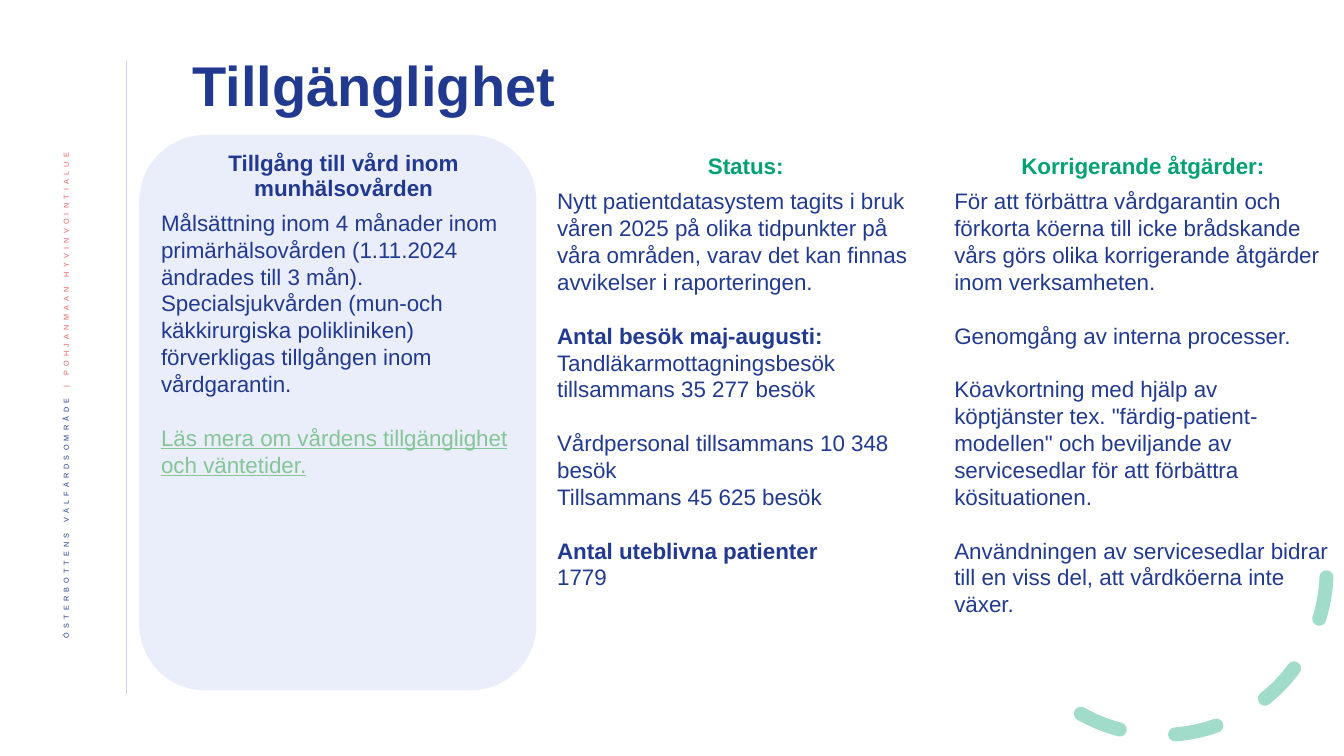
from lxml.etree import SubElement
from pptx import Presentation
from pptx.dml.color import RGBColor
from pptx.enum.dml import MSO_LINE
from pptx.enum.shapes import MSO_CONNECTOR, MSO_SHAPE
from pptx.enum.text import MSO_ANCHOR, MSO_AUTO_SIZE, PP_ALIGN
from pptx.oxml.ns import qn
from pptx.util import Cm, Pt

NAVY, GREEN, LINK, CORAL, LAVENDER = "213A8F", "00A174", "85C598", "EB5C5F", "C9D2F2"
LINE_PITCH = 19.2

# Each paragraph: style ("text", "bold" or "link"), starts a new group, wording
TARGET = [
    ("text", False, "Målsättning inom 4 månader inom primärhälsovården (1.11.2024 ändrades till 3 mån)."),
    ("text", False, "Specialsjukvården (mun-och käkkirurgiska polikliniken) förverkligas "
                    "tillgången inom vårdgarantin."),
    ("link", True, "Läs mera om vårdens tillgänglighet och väntetider."),
]
STATUS = [
    ("text", False, "Nytt patientdatasystem tagits i bruk våren 2025 på olika tidpunkter på våra "
                    "områden, varav det kan finnas avvikelser i raporteringen."),
    ("bold", True, "Antal besök maj-augusti:"),
    ("text", False, "Tandläkarmottagningsbesök tillsammans 35 277 besök"),
    ("text", True, "Vårdpersonal tillsammans 10 348 besök"),
    ("text", False, "Tillsammans 45 625 besök"),
    ("bold", True, "Antal uteblivna patienter"),
    ("text", False, "1779"),
]
ACTIONS = [
    ("text", False, "För att förbättra vårdgarantin och förkorta köerna till icke brådskande vårs "
                    "görs olika korrigerande åtgärder inom verksamheten."),
    ("text", True, "Genomgång av interna processer."),
    ("text", True, "Köavkortning med hjälp av köptjänster tex. \"färdig-patient-modellen\" och "
                   "beviljande av servicesedlar för att förbättra kösituationen."),
    ("text", True, "Användningen av servicesedlar bidrar till en viss del, att vårdköerna inte växer."),
]


def paint(format_, color, opacity=None):
    """Give a fill a solid colour, with opacity in percent."""
    format_.solid()
    format_.fore_color.rgb = RGBColor.from_string(color)
    if opacity is not None:
        srgb = format_._xPr.find(".//" + qn("a:srgbClr"))
        SubElement(srgb, qn("a:alpha")).set("val", str(opacity * 1000))


def set_font(font, size, color, bold=False):
    font.name = "Arial"
    font.size = Pt(size)
    font.bold = bold
    font.color.rgb = RGBColor.from_string(color)


def add_text_box(page, left, top, width, height):
    box = page.shapes.add_textbox(Cm(left), Cm(top), Cm(width), Cm(height))
    box.text_frame.word_wrap = True
    return box.text_frame


def add_title(page, left, top, width, height, text):
    title = page.shapes.title
    title.left, title.top, title.width, title.height = Cm(left), Cm(top), Cm(width), Cm(height)
    frame = title.text_frame
    frame.auto_size = MSO_AUTO_SIZE.NONE
    frame.vertical_anchor = MSO_ANCHOR.MIDDLE
    frame.text = text
    para = frame.paragraphs[0]
    para.alignment = PP_ALIGN.LEFT
    para.line_spacing = 0.9
    set_font(para.font, 40, NAVY, True)


def add_side_band(page, left, top, width, height):
    """Vertical organisation name with the thin rule to its right."""
    rule = page.shapes.add_connector(MSO_CONNECTOR.STRAIGHT, Cm(left + 2.11), Cm(top - 2.06),
                                     Cm(left + 2.11), Cm(top + 13.87))
    paint(rule.line.fill, LAVENDER)
    rule.line.width = Pt(0.5)
    SubElement(rule._element.spPr, qn("a:effectLst"))

    frame = add_text_box(page, left, top, width, height)
    frame.vertical_anchor = MSO_ANCHOR.MIDDLE
    frame._txBody.bodyPr.set("vert", "vert270")
    para = frame.paragraphs[0]
    para.alignment = PP_ALIGN.RIGHT
    para.line_spacing = 0.9
    for text, color in (("ÖSTERBOTTENS VÄLFÄRDSOMRÅDE ", NAVY),
                        ("| POHJANMAAN HYVINVOINTIALUE", CORAL)):
        span = para.add_run()
        span.text = text
        set_font(span.font, 9, color)
        properties = span._r.get_or_add_rPr()
        properties.set("baseline", "30000")
        properties.set("spc", "300")


def add_dashed_arc(page, left, top, size):
    arc = page.shapes.add_shape(MSO_SHAPE.ARC, Cm(left), Cm(top), Cm(size), Cm(size))
    arc.shadow.inherit = False
    arc.rotation = 98.9
    arc.adjustments[0], arc.adjustments[1] = 158.17, 17.81
    arc.fill.background()
    paint(arc.line.fill, GREEN, 36)
    arc.line.width = Pt(10)
    arc.line.dash_style = MSO_LINE.DASH
    arc.line._ln.set("cap", "rnd")


def add_card(page, left, top, width, height):
    card = page.shapes.add_shape(MSO_SHAPE.ROUNDED_RECTANGLE, Cm(left), Cm(top),
                                 Cm(width), Cm(height))
    card.shadow.inherit = False
    paint(card.fill, LAVENDER, 38)
    card.line.fill.background()


def add_column(page, left, top, width, height, heading, color, content, heading_spacing=1):
    frame = add_text_box(page, left, top, width, height)
    para = frame.paragraphs[0]
    para.text = heading
    para.alignment = PP_ALIGN.CENTER
    para.line_spacing = Pt(LINE_PITCH * heading_spacing)
    para.space_after = Pt(6)
    set_font(para.font, 16, color, True)
    for style, new_group, text in content:
        para = frame.add_paragraph()
        para.text = text
        para.line_spacing = Pt(LINE_PITCH)
        if new_group:
            para.space_before = Pt(LINE_PITCH)
        set_font(para.font, 16, LINK if style == "link" else NAVY, style == "bold")
        if style == "link":
            para.font.underline = True


def main():
    deck = Presentation()
    deck.slide_width, deck.slide_height = Cm(33.87), Cm(19.05)
    page = deck.slides.add_slide(deck.slide_layouts[5])
    add_side_band(page, 1.07, 3.61, 1.32, 14.55)
    add_dashed_arc(page, 25.12, 10.21, 8.31)
    add_title(page, 4.6, 1.14, 25.9, 2.16, "Tillgänglighet")
    add_card(page, 3.51, 3.4, 10.01, 14)
    add_column(page, 3.81, 3.71, 9.7, 8.53, "Tillgång till vård inom munhälsovården",
               NAVY, TARGET, 0.9)
    add_column(page, 13.79, 3.71, 10.01, 12.78, "Status:", GREEN, STATUS)
    add_column(page, 23.8, 3.71, 10.01, 12.09, "Korrigerande åtgärder:", GREEN, ACTIONS)
    deck.save("out.pptx")


if __name__ == "__main__":
    main()
